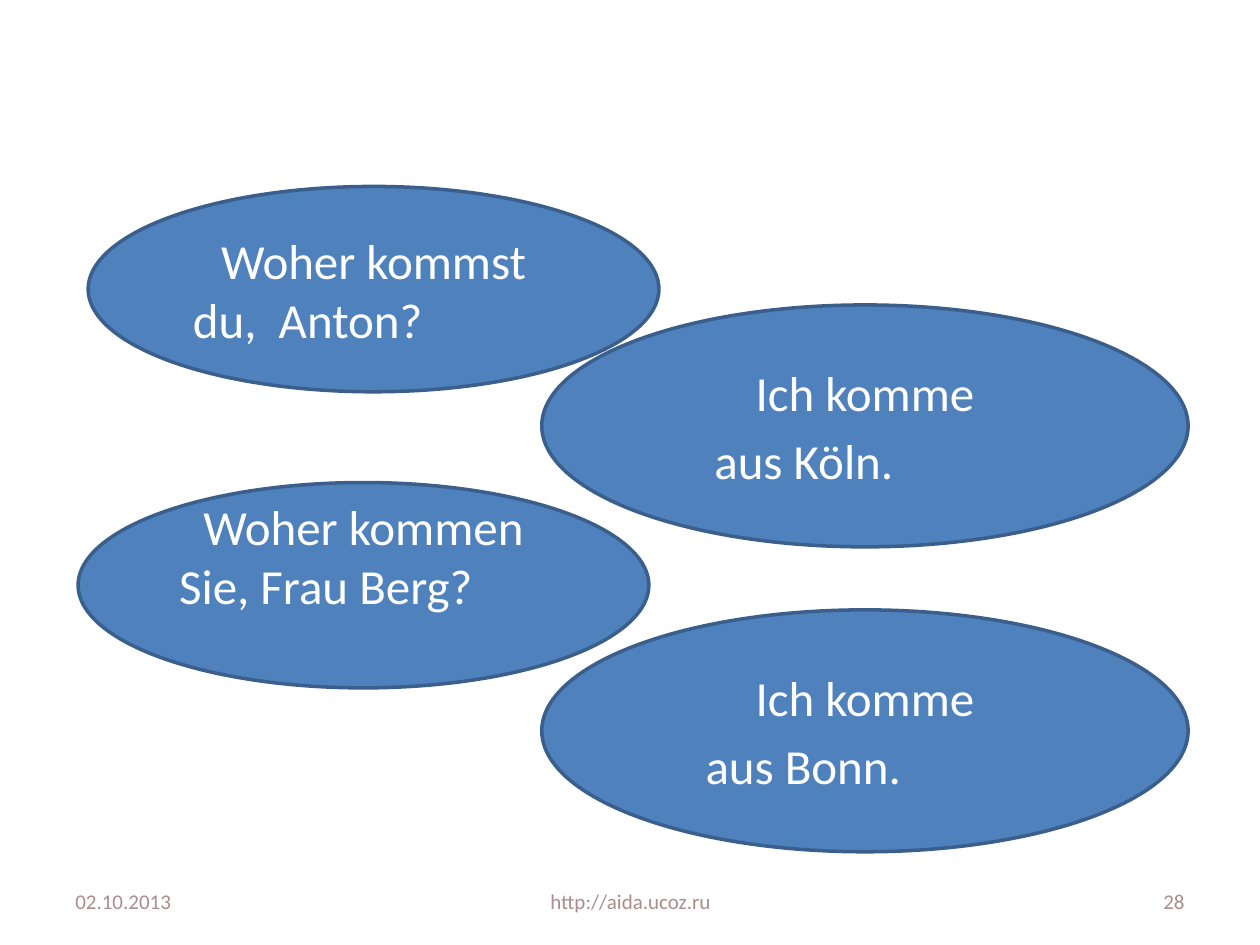
from pptx import Presentation
from pptx.dml.color import RGBColor
from pptx.enum.shapes import MSO_SHAPE
from pptx.enum.text import MSO_ANCHOR, PP_ALIGN
from pptx.util import Inches, Pt

LEFT, CENTER, RIGHT = PP_ALIGN.LEFT, PP_ALIGN.CENTER, PP_ALIGN.RIGHT
MIDDLE = MSO_ANCHOR.MIDDLE
ELLIPSE = MSO_SHAPE.OVAL

BLUE = RGBColor(0x4F, 0x81, 0xBD)
DARK_BLUE = RGBColor(0x3A, 0x5F, 0x8C)
WHITE = RGBColor(0xFF, 0xFF, 0xFF)
ROSE = RGBColor(0xAC, 0x8C, 0x8C)

BLANK_LAYOUT = 6
QUESTION_SIZE = (4.53, 1.63)
ANSWER_SIZE = (5.13, 1.92)
ANSWER_GAP = 5.6

FOOTERS = [
    ("02.10.2013", 0.5, 2.33, LEFT),
    ("http://aida.ucoz.ru", 3.42, 3.17, CENTER),
    ("28", 7.17, 2.33, RIGHT),
]

BUBBLES = [
    ("Woher kommst", "du,  Anton?", 0.7, 1.48, QUESTION_SIZE, 0.07, 0, 0.05),
    ("Ich komme", "aus Köln.", 4.3, 2.42, ANSWER_SIZE, 0.52, ANSWER_GAP, 0.05),
    ("Woher kommen", "Sie, Frau Berg?", 0.62, 3.83, QUESTION_SIZE, 0.04, 0, 0.52),
    ("Ich komme", "aus Bonn.", 4.3, 4.84, ANSWER_SIZE, 0.45, ANSWER_GAP, 0.05),
]


class DialogueSlide:
    font_name = "Calibri"
    frame_format = {"word_wrap": True, "vertical_anchor": MIDDLE}

    def __init__(self, presentation):
        layout = presentation.slide_layouts[BLANK_LAYOUT]
        self.slide = presentation.slides.add_slide(layout)

    def format_frame(self, frame, **extra):
        for name, value in {**self.frame_format, **extra}.items():
            setattr(frame, name, value)

    def fill_paragraph(self, paragraph, text, alignment, size, color):
        paragraph.text = text
        paragraph.alignment = alignment
        for name, value in {"name": self.font_name, "size": Pt(size)}.items():
            setattr(paragraph.font, name, value)
        paragraph.font.color.rgb = color

    def footer(self, text, left, width, alignment):
        box = self.slide.shapes.add_textbox(
            Inches(left), Inches(6.95), Inches(width), Inches(0.4)
        )
        self.format_frame(box.text_frame)
        self.fill_paragraph(box.text_frame.paragraphs[0], text, alignment, 12, ROSE)

    def bubble(self, first, second, left, top, size, indent, gap, bottom):
        width, height = size
        shape = self.slide.shapes.add_shape(
            ELLIPSE, Inches(left), Inches(top), Inches(width), Inches(height)
        )
        shape.shadow.inherit = False
        shape.fill.solid()
        shape.fill.fore_color.rgb = BLUE
        shape.line.color.rgb = DARK_BLUE
        shape.line.width = Pt(2)
        frame = shape.text_frame
        self.format_frame(frame, margin_bottom=Inches(bottom))
        self.fill_paragraph(frame.paragraphs[0], first, CENTER, 28, WHITE)
        paragraph = frame.add_paragraph()
        paragraph.space_before = Pt(gap)
        paragraph_properties = paragraph._p.get_or_add_pPr()
        paragraph_properties.set("marL", str(Inches(indent)))
        self.fill_paragraph(paragraph, second, LEFT, 28, WHITE)


def main():
    presentation = Presentation()
    presentation.slide_width = Inches(10)
    presentation.slide_height = Inches(7.5)
    dialogue = DialogueSlide(presentation)
    for footer in FOOTERS:
        dialogue.footer(*footer)
    for bubble in BUBBLES:
        dialogue.bubble(*bubble)
    presentation.save("out.pptx")


if __name__ == "__main__":
    main()
